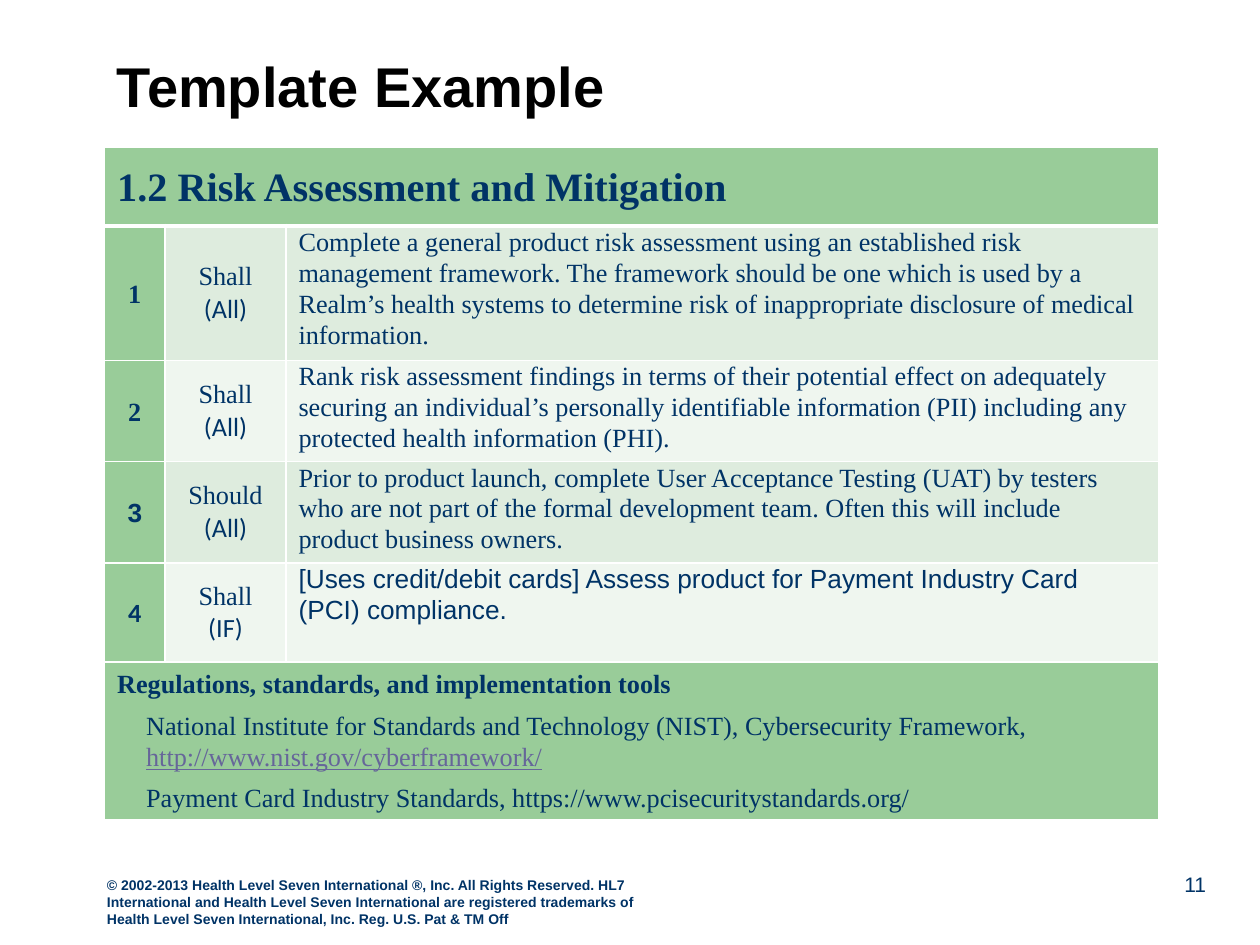
import pptx
import pptx.util
import pptx.dml.color
import pptx.enum.text
import pptx.oxml
import lxml.etree

Pt = pptx.util.Pt
Align = pptx.enum.text.PP_ALIGN
Anchor = pptx.enum.text.MSO_ANCHOR
SERIF, SANS, HUMANIST = "Times New Roman", "Arial", "Calibri"
THEME = dict(
    navy="003366", black="000000", link="666699", white="FFFFFF",
    green="99CC99", bands=("DEECDE", "EFF6EF"),
    title=32, heading=23, body=15, number=12, footer=8,
)

deck = pptx.Presentation()
deck.slide_width, deck.slide_height = pptx.util.Inches(10), pptx.util.Inches(7.5)
W, H = deck.slide_width, deck.slide_height
slide = deck.slides.add_slide(deck.slide_layouts[6])


def write(paragraph, text, size, font=SERIF, color="navy", bold=False, underline=False):
    """Add one styled run to a paragraph."""
    run = paragraph.add_run()
    run.text = text
    run.font.size, run.font.name = Pt(size), font
    run.font.bold, run.font.underline = bold, underline
    run.font.color.rgb = pptx.dml.color.RGBColor.from_string(THEME[color])


def prepare(cell, fill, anchor=Anchor.MIDDLE, top=1, bottom=1):
    """Give a cell its fill, margins and white borders."""
    cell.vertical_anchor = anchor
    cell.margin_left = cell.margin_right = pptx.util.Inches(0.1)
    cell.margin_top = cell.margin_bottom = 0
    cell.fill.solid()
    cell.fill.fore_color.rgb = pptx.dml.color.RGBColor.from_string(fill)
    properties = cell._tc.get_or_add_tcPr()
    for place, (side, width) in enumerate((("L", 1), ("R", 1), ("T", top), ("B", bottom))):
        border = pptx.oxml.parse_xml(
            f'<a:ln{side} xmlns:a="http://schemas.openxmlformats.org/drawingml/2006/main" '
            f'w="{Pt(width)}"><a:solidFill><a:srgbClr val="{THEME["white"]}"/>'
            f'</a:solidFill></a:ln{side}>')
        properties.insert(place, border)


# Title, page number and copyright line, placed by shares of the slide
COPYRIGHT = ("© 2002-2013 Health Level Seven International ®, Inc. All Rights Reserved. "
             "HL7 International and Health Level Seven International are registered "
             "trademarks of Health Level Seven International, Inc. Reg. U.S. Pat & TM Off")
LABELS = [
    ((0.083, 0.033, 0.875, 0.1), "Template Example", "title", "black", True,
     Anchor.BOTTOM, Align.LEFT, 0.9),
    ((0.9, 0.887, 0.067, 0.069), "11", "number", "navy", False,
     Anchor.BOTTOM, Align.RIGHT, 1.0),
    ((0.075, 0.921, 0.458, 0.067), COPYRIGHT, "footer", "navy", True,
     Anchor.TOP, Align.LEFT, 1.0),
]
for (x, y, w, h), text, level, color, bold, anchor, align, spacing in LABELS:
    frame = slide.shapes.add_textbox(int(x * W), int(y * H), int(w * W), int(h * H)).text_frame
    frame.word_wrap, frame.vertical_anchor = True, anchor
    line = frame.paragraphs[0]
    line.alignment, line.line_spacing = align, spacing
    write(line, text, THEME[level], SANS, color, bold)

# Table grid
COLUMNS = (0.048, 0.096, 0.693)
ROWS = (0.083, 0.14, 0.105, 0.105, 0.105, 0.167)
table = slide.shapes.add_table(
    len(ROWS), len(COLUMNS), int(0.083 * W), int(0.156 * H),
    int(sum(COLUMNS) * W), int(sum(ROWS) * H)).table
for column, share in zip(table.columns, COLUMNS):
    column.width = int(share * W)
for row, share in zip(table.rows, ROWS):
    row.height = int(share * H)

# Section heading and references span the full width
last = len(ROWS) - 1
for r in (0, last):
    table.cell(r, 0).merge(table.cell(r, 2))
    for c in range(3):
        prepare(table.cell(r, c), THEME["green"], bottom=1 if r else 3)

heading = table.cell(0, 0).text_frame.paragraphs[0]
heading.line_spacing = 1.07
write(heading, "1.2 Risk Assessment and Mitigation", THEME["heading"], bold=True)

# Requirements: number font, obligation, scope, text font, text
REQUIREMENTS = [
    (SERIF, "Shall", "(All)", SERIF,
     "Complete a general product risk assessment using an established risk management "
     "framework. The framework should be one which is used by a Realm’s health systems to "
     "determine risk of inappropriate disclosure of medical information."),
    (SERIF, "Shall", "(All)", SERIF,
     "Rank risk assessment findings in terms of their potential effect on adequately "
     "securing an individual’s personally identifiable information (PII) including any "
     "protected health information (PHI)."),
    (SANS, "Should", "(All)", SERIF,
     "Prior to product launch, complete User Acceptance Testing (UAT) by testers who are "
     "not part of the formal development team. Often this will include product business "
     "owners."),
    (HUMANIST, "Shall", "(IF)", SANS,
     "[Uses credit/debit cards] Assess product for Payment Industry Card (PCI) compliance."),
]
for r, (number_font, obligation, scope, text_font, text) in enumerate(REQUIREMENTS, 1):
    band = THEME["bands"][(r - 1) % 2]
    contents = [
        (THEME["green"], Anchor.MIDDLE, Align.CENTER, [(str(r), number_font, True)]),
        (band, Anchor.MIDDLE, Align.CENTER,
         [(obligation, SERIF, False), (scope, HUMANIST, False)]),
        (band, Anchor.TOP, Align.LEFT, [(text, text_font, False)]),
    ]
    for c, (fill, anchor, align, lines) in enumerate(contents):
        cell = table.cell(r, c)
        prepare(cell, fill, anchor, top=3 if r == 1 else 1)
        for i, (words, font, bold) in enumerate(lines):
            frame = cell.text_frame
            line = frame.add_paragraph() if i else frame.paragraphs[0]
            line.alignment, line.line_spacing = align, 1.07
            write(line, words, THEME["body"], font, bold=bold)

# References, indented below their heading
REFERENCES = [
    [("Regulations, standards, and implementation tools", dict(bold=True))],
    [("National Institute for Standards and Technology (NIST), Cybersecurity Framework, ", {}),
     ("http://www.nist.gov/cyberframework/", dict(color="link", underline=True))],
    [("Payment Card Industry Standards, https://www.pcisecuritystandards.org/", {})],
]
references = table.cell(last, 0).text_frame
for i, runs in enumerate(REFERENCES):
    line = references.add_paragraph() if i else references.paragraphs[0]
    line.line_spacing, line.space_after = 1.07, Pt(6)
    if i:
        line._p.get_or_add_pPr().set("marL", str(pptx.util.Inches(0.23)))
    for words, style in runs:
        write(line, words, THEME["body"], **style)

deck.save("out.pptx")
